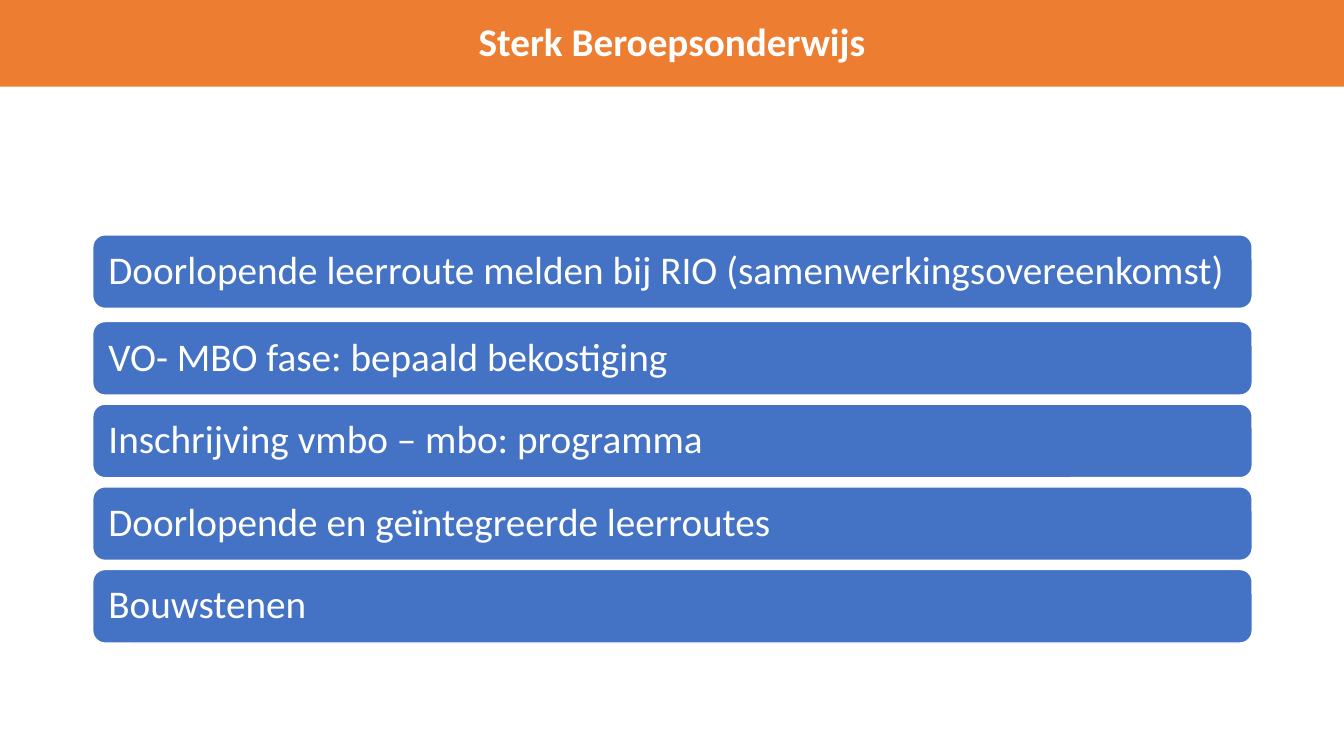
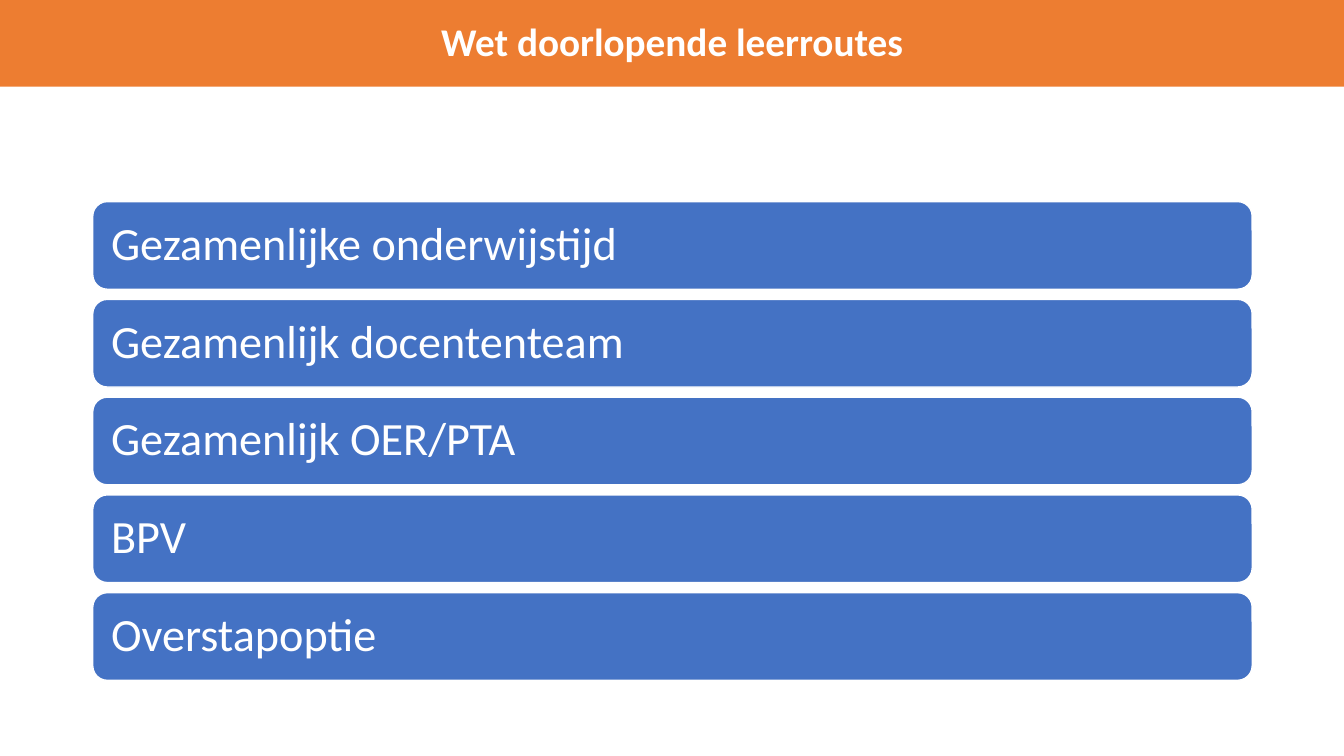
from pptx import Presentation
from pptx.dml.color import RGBColor
from pptx.enum.shapes import MSO_SHAPE
from pptx.enum.text import MSO_ANCHOR, MSO_AUTO_SIZE, PP_ALIGN
from pptx.util import Pt

PX = 9144  # EMU per px, 100 px to the inch
SLIDE_W, SLIDE_H = 1333, 750
TITLE_H = 86
BAR_X, BAR_W = 92, 1150
FONT = "Calibri"
COLORS = {"title": "ED7D31", "bar": "4472C4", "white": "FFFFFF"}

SLIDES = [
    {
        "title": "Sterk Beroepsonderwijs",
        "bars": [
            "Doorlopende leerroute melden bij RIO (samenwerkingsovereenkomst)",
            "VO- MBO fase: bepaald bekostiging",
            "Inschrijving vmbo – mbo: programma",
            "Doorlopende en geïntegreerde leerroutes",
            "Bouwstenen",
        ],
        # The first bar stands slightly apart from the evenly spaced rest.
        "top": 237, "pitch": 82, "height": 73, "size": 28, "inset": 12, "first_lift": 4,
    },
    {
        "title": "Wet doorlopende leerroutes",
        "bars": [
            "Gezamenlijke onderwijstijd",
            "Gezamenlijk docententeam",
            "Gezamenlijk OER/PTA",
            "BPV",
            "Overstapoptie",
        ],
        "top": 200, "pitch": 97, "height": 87, "size": 33, "inset": 14, "first_lift": 0,
    },
]


def px(n):
    return n * PX


def rgb(name):
    return RGBColor.from_string(COLORS[name])


def fill(sp, color):
    sp.fill.solid()
    sp.fill.fore_color.rgb = rgb(color)


def write(sp, text, size, bold=False, align=PP_ALIGN.LEFT, inset=None):
    tf = sp.text_frame
    tf.word_wrap = True
    tf.auto_size = MSO_AUTO_SIZE.NONE
    tf.vertical_anchor = MSO_ANCHOR.MIDDLE
    if inset is not None:
        tf.margin_left = tf.margin_right = px(inset)
        tf.margin_top = tf.margin_bottom = px(inset)
    p = tf.paragraphs[0]
    p.alignment = align
    p.line_spacing = 0.9
    r = p.add_run()
    r.text = text
    r.font.name = FONT
    r.font.size = Pt(size)
    r.font.bold = bold
    r.font.color.rgb = rgb("white")


def add_title(s, text):
    sp = s.shapes.title
    sp.left, sp.top, sp.width, sp.height = 0, 0, px(SLIDE_W), px(TITLE_H)
    fill(sp, "title")
    write(sp, text, 28, bold=True, align=PP_ALIGN.CENTER)


def add_bar(s, text, top, height, size, inset):
    sp = s.shapes.add_shape(MSO_SHAPE.ROUNDED_RECTANGLE,
                            px(BAR_X), px(top), px(BAR_W), px(height))
    sp.shadow.inherit = False
    fill(sp, "bar")
    sp.line.color.rgb = rgb("white")
    sp.line.width = Pt(1)
    write(sp, text, size, inset=inset)


def add_slide(prs, content):
    s = prs.slides.add_slide(prs.slide_layouts.get_by_name("Title Only"))
    add_title(s, content["title"])
    for i, text in enumerate(content["bars"]):
        top = content["top"] + i * content["pitch"]
        if i == 0:
            top -= content["first_lift"]
        add_bar(s, text, top, content["height"], content["size"], content["inset"])


def main():
    prs = Presentation()
    prs.slide_width, prs.slide_height = px(SLIDE_W), px(SLIDE_H)
    for content in SLIDES:
        add_slide(prs, content)
    prs.save("out.pptx")


if __name__ == "__main__":
    main()
